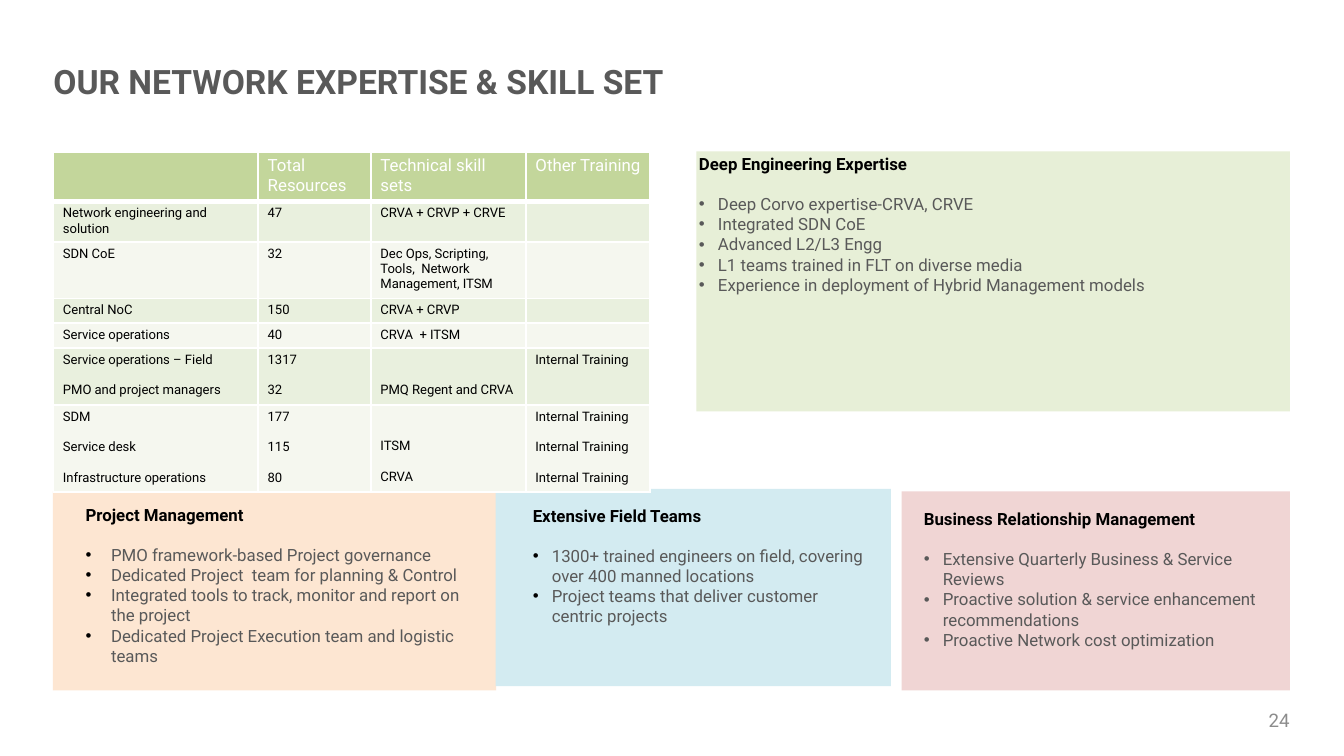
"""Build the network expertise and skill set slide."""
from lxml import etree
from pptx import Presentation
from pptx.dml.color import RGBColor
from pptx.enum.shapes import MSO_SHAPE
from pptx.enum.text import MSO_ANCHOR, PP_ALIGN
from pptx.oxml.ns import qn
from pptx.util import Cm, Pt

RECTANGLE = MSO_SHAPE.RECTANGLE
TOP, MIDDLE, BOTTOM = MSO_ANCHOR.TOP, MSO_ANCHOR.MIDDLE, MSO_ANCHOR.BOTTOM
LEFT, RIGHT = PP_ALIGN.LEFT, PP_ALIGN.RIGHT
FONT = "Roboto"
COLORS = {
    "black": "000000", "white": "FFFFFF", "body": "595959", "number": "8C8C8C",
    "green": "E7EFD7", "orange": "FDE6D2", "blue": "D3EBF1", "pink": "F0D5D4",
    "header": "C3D69B", "band": "E9F0DE", "light": "F5F7EF",
}
TRAINING = "Internal Training"
COLUMN_WIDTHS = [3.87, 2.13, 2.93, 2.34]
ROWS = [
    (0.94, "header", ["", "Total Resources", "Technical skill sets", "Other Training"]),
    (0.76, "band", ["Network engineering and solution", "47", "CRVA + CRVP + CRVE", ""]),
    (1.07, "light", ["SDN CoE", "32", "Dec Ops, Scripting, Tools,  Network Management, ITSM", ""]),
    (0.47, "band", ["Central NoC", "150", "CRVA + CRVP", ""]),
    (0.47, "light", ["Service operations", "40", "CRVA  + ITSM", ""]),
    (1.07, "band", ["Service operations – Field\nPMO and project managers", "1317\n32",
                    "PMQ Regent and CRVA", TRAINING]),
    (1.65, "light", ["SDM\nService desk\nInfrastructure operations", "177\n115\n80",
                     "ITSM\nCRVA", "\n".join([TRAINING] * 3)]),
]
BOTTOM_CELLS = {(5, 2), (6, 2)}
ENGINEERING = ["Deep Corvo expertise-CRVA, CRVE", "Integrated SDN CoE", "Advanced L2/L3 Engg",
               "L1 teams trained in FLT on diverse media",
               "Experience in deployment of Hybrid Management models"]
PANELS = [
    ("orange", (1, 9.29, 8.38, 3.76), (1.37, 9.41, 7.72, 3.18), (0.25, 0.13), 0.48, "black",
     "Project Management",
     ["PMO framework-based Project governance",
      "Dedicated Project  team for planning & Control",
      "Integrated tools to track, monitor and report on the project",
      "Dedicated Project Execution team and logistic teams"]),
    ("blue", (9.37, 9.24, 7.47, 3.73), (10.02, 9.51, 6.48, 2.29), (0.05, 0.05), 0.36, "black",
     "Extensive Field Teams",
     ["1300+ trained engineers on field, covering over 400 manned locations",
      "Project teams that deliver customer centric projects"]),
    ("pink", (17.04, 9.29, 7.34, 3.76), (17.41, 9.57, 6.71, 3.18), (0.05, 0.05), 0.36, "body",
     "Business Relationship Management",
     ["Extensive Quarterly Business & Service Reviews",
      "Proactive solution & service enhancement recommendations",
      "Proactive Network cost optimization"]),
]


def rgb(name):
    """Return the named colour."""
    return RGBColor.from_string(COLORS[name])


def add_span(para, text, size, color, bold=False):
    """Add one formatted run to a paragraph."""
    span = para.add_run()
    span.text = text
    span.font.name = FONT
    span.font.size = Pt(size)
    span.font.bold = bold
    span.font.color.rgb = rgb(color)


def set_frame(frame, margins, anchor=TOP):
    """Set wrapping, anchor and left, top, right, bottom margins."""
    frame.word_wrap = True
    frame.vertical_anchor = anchor
    (frame.margin_left, frame.margin_top,
     frame.margin_right, frame.margin_bottom) = map(Cm, margins)


def add_label(page, place, text, size, color, margins, align=LEFT, bold=False):
    """Add a single-line text box."""
    frame = page.shapes.add_textbox(*map(Cm, place)).text_frame
    set_frame(frame, margins, MIDDLE)
    para = frame.paragraphs[0]
    para.alignment = align
    add_span(para, text, size, color, bold)


def add_panel(shapes, place, fill):
    """Add a plain filled rectangle."""
    panel = shapes.add_shape(RECTANGLE, *map(Cm, place))
    panel.shadow.inherit = False
    panel.fill.solid()
    panel.fill.fore_color.rgb = rgb(fill)
    panel.line.fill.background()
    return panel


def set_bullet(para, indent, color):
    """Give a paragraph a hanging round bullet."""
    props = para._p.get_or_add_pPr()
    props.set("marL", str(Cm(indent)))
    props.set("indent", str(-Cm(indent)))
    tint = etree.SubElement(props, qn("a:buClr"))
    etree.SubElement(tint, qn("a:srgbClr"), val=COLORS[color])
    etree.SubElement(props, qn("a:buFont"), typeface="Arial")
    etree.SubElement(props, qn("a:buChar"), char="•")


def write_list(frame, heading, items, indent, bullet_color):
    """Write a bold heading followed by bullets."""
    para = frame.paragraphs[0]
    para.alignment = LEFT
    para.space_after = Pt(10.5)
    add_span(para, heading, 9, "black", True)
    for item in items:
        para = frame.add_paragraph()
        para.alignment = LEFT
        set_bullet(para, indent, bullet_color)
        add_span(para, item, 9, "body")


def add_list_panel(page, fill, place, text_place, margins, indent, bullet_color, heading, items):
    """Add a grouped rectangle and bullet list."""
    group = page.shapes.add_group_shape()
    add_panel(group.shapes, place, fill)
    frame = group.shapes.add_textbox(*map(Cm, text_place)).text_frame
    set_frame(frame, margins * 2)
    write_list(frame, heading, items, indent, bullet_color)


def set_borders(cell, bottom_width):
    """Draw white borders round a cell."""
    props = cell._tc.get_or_add_tcPr()
    for side, width in (("L", 1), ("R", 1), ("T", 1), ("B", bottom_width)):
        line = etree.SubElement(props, qn(f"a:ln{side}"), w=str(Pt(width)))
        fill = etree.SubElement(line, qn("a:solidFill"))
        etree.SubElement(fill, qn("a:srgbClr"), val=COLORS["white"])


def write_cell(cell, text, fill, anchor):
    """Fill a table cell and write its lines."""
    is_header = fill == "header"
    set_borders(cell, 3 if is_header else 1)
    cell.fill.solid()
    cell.fill.fore_color.rgb = rgb(fill)
    cell.vertical_anchor = anchor
    cell.margin_left = cell.margin_right = Cm(0.18)
    cell.margin_top, cell.margin_bottom = Cm(0.08), Cm(0.14 if anchor == BOTTOM else 0.08)
    frame = cell.text_frame
    if not text:
        etree.SubElement(frame.paragraphs[0]._p, qn("a:endParaRPr"), sz="700")
        return
    for index, words in enumerate(text.split("\n")):
        para = frame.add_paragraph() if index else frame.paragraphs[0]
        if index:
            para.space_before = Pt(8.2)
        add_span(para, words, 9 if is_header else 7, "white" if is_header else "black")


def add_skill_table(page):
    """Add the table of teams, resources and skills."""
    place = (1.01, 2.87, sum(COLUMN_WIDTHS), sum(row[0] for row in ROWS))
    table = page.shapes.add_table(len(ROWS), len(COLUMN_WIDTHS), *map(Cm, place)).table
    table.first_row = table.horz_banding = False
    for column, width in zip(table.columns, COLUMN_WIDTHS):
        column.width = Cm(width)
    for row, (height, fill, texts) in enumerate(ROWS):
        table.rows[row].height = Cm(height)
        for column, text in enumerate(texts):
            anchor = BOTTOM if (row, column) in BOTTOM_CELLS else TOP
            write_cell(table.cell(row, column), text, fill, anchor)


def main():
    """Build and save the deck."""
    deck = Presentation()
    deck.slide_width, deck.slide_height = Cm(25.4), Cm(14.29)
    page = deck.slides.add_slide(deck.slide_layouts[6])
    add_label(page, (1.01, 1.02, 20.93, 1.02), "OUR NETWORK EXPERTISE & SKILL SET",
              18, "body", (0, 0.13, 0.25, 0.13), bold=True)
    add_label(page, (23.02, 13.24, 1.35, 0.76), "24", 10, "number",
              (0.25, 0.13, 0, 0.13), RIGHT)
    panel = add_panel(page.shapes, (13.16, 2.86, 11.22, 4.92), "green")
    set_frame(panel.text_frame, [0.05] * 4)
    write_list(panel.text_frame, "Deep Engineering Expertise", ENGINEERING, 0.36, "body")
    for details in PANELS:
        add_list_panel(page, *details)
    add_skill_table(page)
    deck.save("out.pptx")


if __name__ == "__main__":
    main()
